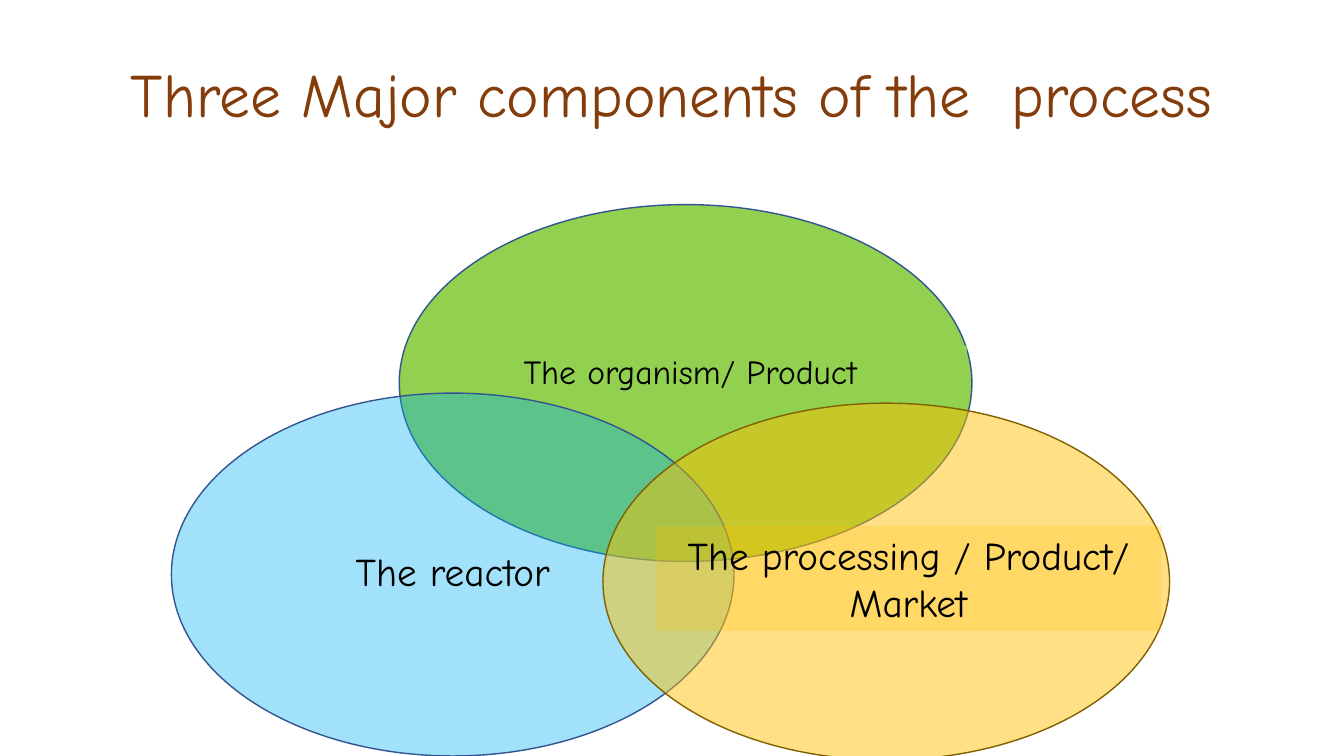
from dataclasses import dataclass

from lxml import etree
from pptx import Presentation
from pptx.dml.color import RGBColor as RGB
from pptx.enum.shapes import MSO_SHAPE as SHAPE
from pptx.enum.text import MSO_ANCHOR as ANCHOR, PP_ALIGN as ALIGN
from pptx.oxml.ns import qn
from pptx.util import Pt

PX = 9144  # EMU in one px, 100 px to the inch


@dataclass(frozen=True)
class Theme:
    font: str = "Comic Neue"
    title: str = "843C0B"
    ink: str = "000000"
    green: str = "92D050"
    blue: str = "00B0F0"
    amber: str = "FFC000"
    blue_line: str = "325491"
    amber_line: str = "806000"
    title_size: int = 44
    label_size: int = 28
    small_size: int = 24


T = Theme()


def emu(box):
    return [v * PX for v in box]


def paint(sp, color, alpha=100):
    sp.fill.solid()
    sp.fill.fore_color.rgb = RGB.from_string(color)
    if alpha < 100:
        clr = sp.fill._xPr.find(qn("a:solidFill"))[0]
        etree.SubElement(clr, qn("a:alpha")).set("val", str(alpha * 1000))


def write(sp, lines, size, color=T.ink):
    tf = sp.text_frame
    tf.word_wrap = True
    tf.vertical_anchor = ANCHOR.TOP
    tf.text = "\n".join(lines)
    for p in tf.paragraphs:
        p.alignment = ALIGN.CENTER
        p.font.name = T.font
        p.font.size = Pt(size)
        p.font.color.rgb = RGB.from_string(color)


def title(slide, box, text):
    write(slide.shapes.add_textbox(*emu(box)), [text], T.title_size, T.title)


def component(slide, box, label_box, lines, size, color, line, alpha=100, label_alpha=None):
    """One set of the diagram; label_box is measured from the ellipse's corner."""
    shapes = slide.shapes.add_group_shape().shapes
    x, y, _, _ = box
    dx, dy, w, h = label_box

    # Ellipse
    oval = shapes.add_shape(SHAPE.OVAL, *emu(box))
    oval.shadow.inherit = False
    paint(oval, color, alpha)
    oval.line.color.rgb = RGB.from_string(line)
    oval.line.width = Pt(1)

    # Label, on a band of the same colour where one is wanted
    label = shapes.add_textbox(*emu((x + dx, y + dy, w, h)))
    if label_alpha:
        paint(label, color, label_alpha)
    write(label, lines, size)


def venn_slide(prs):
    slide = prs.slides.add_slide(prs.slide_layouts[6])
    # Three overlapping components
    component(slide, (396, 203, 568, 354), (14, 140, 549, 50), ["The organism/ Product"],
              T.small_size, T.green, T.blue_line, label_alpha=100)
    component(slide, (170, 390, 558, 360), (0, 148, 558, 57), ["The reactor"],
              T.label_size, T.blue, T.blue_line, alpha=37)
    component(slide, (598, 400, 562, 354), (52, 122, 502, 104),
              ["The processing / Product/", "Market"],
              T.label_size, T.amber, T.amber_line, alpha=48, label_alpha=23)
    # Heading
    title(slide, (0, 51, 1333, 84), "Three Major components of the  process")


def main():
    prs = Presentation()
    prs.slide_width, prs.slide_height = 1333 * PX, 750 * PX
    venn_slide(prs)
    prs.save("out.pptx")


if __name__ == "__main__":
    main()
